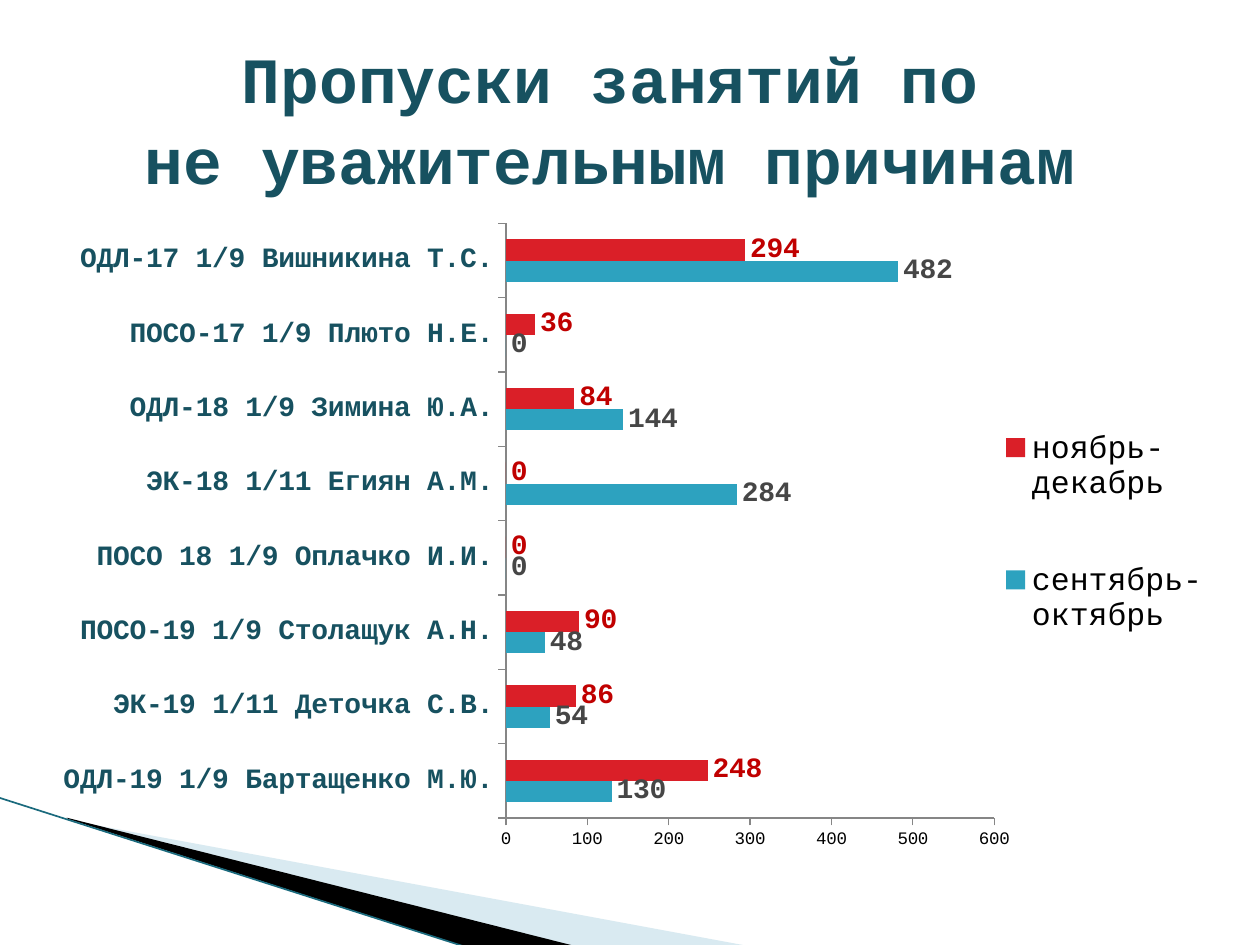
from lxml import etree
from pptx import Presentation
from pptx.chart.data import CategoryChartData
from pptx.dml.color import RGBColor
from pptx.enum.chart import (XL_CHART_TYPE, XL_LABEL_POSITION, XL_LEGEND_POSITION,
                             XL_TICK_MARK)
from pptx.enum.shapes import MSO_CONNECTOR
from pptx.enum.text import MSO_ANCHOR, MSO_AUTO_SIZE, PP_ALIGN
from pptx.oxml import parse_xml
from pptx.oxml.ns import nsdecls, qn
from pptx.util import Inches, Pt

BAR = XL_CHART_TYPE.BAR_CLUSTERED
OUTSIDE_END = XL_LABEL_POSITION.OUTSIDE_END
RIGHT = XL_LEGEND_POSITION.RIGHT
TICK_OUT = XL_TICK_MARK.OUTSIDE
STRAIGHT = MSO_CONNECTOR.STRAIGHT

DARK_TEAL = RGBColor(0x17, 0x51, 0x60)
EDGE_TEAL = RGBColor(0x1A, 0x6A, 0x7D)
PALE_BLUE = RGBColor(0xA0, 0xCB, 0xDC)
TEAL = RGBColor(0x2D, 0xA2, 0xBF)
RED = RGBColor(0xDA, 0x1F, 0x28)
ORANGE = RGBColor(0xEB, 0x64, 0x1B)
BLUE = RGBColor(0x39, 0x63, 0x9D)
DARK_RED = RGBColor(0xC0, 0x00, 0x00)
DARK_GREY = RGBColor(0x46, 0x46, 0x46)
AXIS_GREY = RGBColor(0x86, 0x86, 0x86)
BLACK = RGBColor(0, 0, 0)
FONT = "Courier New"

TITLE_LINES = ("Пропуски занятий по ", "не уважительным причинам ")
GROUPS = ("ОДЛ-19 1/9 Бартащенко М.Ю.", "ЭК-19 1/11 Деточка С.В.",
          "ПОСО-19 1/9 Столащук А.Н.", "ПОСО 18 1/9 Оплачко И.И.",
          "ЭК-18 1/11 Егиян А.М.", "ОДЛ-18 1/9 Зимина Ю.А.",
          "ПОСО-17 1/9 Плюто Н.Е.", "ОДЛ-17 1/9 Вишникина Т.С.")
# Name, values, bar colour, label colour (None: series still without data)
PERIODS = (
    ("сентябрь-октябрь", (130, 54, 48, 0, 284, 144, 0, 482), TEAL, DARK_GREY),
    ("ноябрь-декабрь", (248, 86, 90, 0, 0, 84, 36, 294), RED, DARK_RED),
    ("Ряд 3", (), ORANGE, None),
    ("Ряд 4", (), BLUE, None),
)


def set_font(font, size, color, bold=False):
    values = {"name": FONT, "size": Pt(size), "bold": bold}
    for name, value in values.items():
        setattr(font, name, value)
    font.color.rgb = color


def add_wedge(s, points, color, alpha=None):
    points = [(Inches(x), Inches(y)) for x, y in points]
    builder = s.shapes.build_freeform(*points[0])
    builder.add_line_segments(points[1:])
    sp = builder.convert_to_shape()
    sp.shadow.inherit = False
    sp.fill.solid()
    sp.fill.fore_color.rgb = color
    sp.line.fill.background()
    if alpha is not None:
        fill_color = sp.fill._xPr.find(qn("a:solidFill"))[0]
        etree.SubElement(fill_color, qn("a:alpha"), val=str(alpha * 1000))


def add_edge(s, start, end, color, width):
    points = [Inches(v) for v in (*start, *end)]
    line = s.shapes.add_connector(STRAIGHT, *points)
    line.line.color.rgb = color
    line.line.width = Pt(width)
    etree.SubElement(line._element.spPr, qn("a:effectLst"))


def add_title(s):
    title = s.shapes.title
    box = {"left": 0.5, "top": 0.3, "width": 9, "height": 1.25}
    for name, value in box.items():
        setattr(title, name, Inches(value))
    tf = title.text_frame
    frame = {"word_wrap": True, "auto_size": MSO_AUTO_SIZE.NONE,
             "vertical_anchor": MSO_ANCHOR.MIDDLE}
    for name, value in frame.items():
        setattr(tf, name, value)
    p = tf.paragraphs[0]
    p.alignment = PP_ALIGN.CENTER
    p.line_spacing = 1.05
    for i, text in enumerate(TITLE_LINES):
        if i:
            p.add_line_break()
        r = p.add_run()
        r.text = text
        set_font(r.font, 36.9, DARK_TEAL, True)


def set_layout(parent, after, box, inner=False):
    """Place a chart part by percentages of the chart area."""
    for old in parent.findall(qn("c:layout")):
        parent.remove(old)
    target = '<c:layoutTarget val="inner"/>' if inner else ""
    modes = '<c:xMode val="edge"/><c:yMode val="edge"/>'
    body = "".join(f'<c:{tag} val="{value / 100:.3f}"/>'
                   for tag, value in zip("xywh", box))
    layout = parse_xml(f'<c:layout {nsdecls("c")}><c:manualLayout>'
                       f'{target}{modes}{body}</c:manualLayout></c:layout>')
    if after is None:
        parent.insert(0, layout)
    else:
        after.addnext(layout)


def hide_legend_entry(position, index):
    """Add a deleted legend entry after the given element and return it."""
    entry = parse_xml(f'<c:legendEntry {nsdecls("c")}><c:idx val="{index}"/>'
                      f'<c:delete val="1"/></c:legendEntry>')
    position.addnext(entry)
    return entry


def format_axis(axis, size, color, bold=False):
    axis.has_major_gridlines = False
    axis.major_tick_mark = TICK_OUT
    axis.format.line.color.rgb = AXIS_GREY
    set_font(axis.tick_labels.font, size, color, bold)


def format_series(series, color, label_color):
    series.format.fill.solid()
    series.format.fill.fore_color.rgb = color
    series.invert_if_negative = False
    if label_color is not None:
        labels = series.data_labels
        labels.show_value = True
        labels.position = OUTSIDE_END
        set_font(labels.font, 16, label_color, True)


def add_absence_chart(s):
    data = CategoryChartData()
    data.categories = GROUPS
    for name, values, _, _ in PERIODS:
        data.add_series(name, values)
    box = [Inches(v) for v in (0.12, 1.62, 9.69, 5.28)]
    chart = s.shapes.add_chart(BAR, *box, data).chart
    chart.has_title = False
    set_font(chart.font, 10, BLACK)

    # Bars
    plot = chart.plots[0]
    plot.gap_width = 150
    plot.overlap = 0
    plot.vary_by_categories = False
    for series, (_, _, color, label_color) in zip(plot.series, PERIODS):
        format_series(series, color, label_color)

    # Axes
    format_axis(chart.category_axis, 16, DARK_TEAL, True)
    format_axis(chart.value_axis, 10, BLACK)
    scale = {"minimum_scale": 0, "maximum_scale": 600, "major_unit": 100}
    for name, value in scale.items():
        setattr(chart.value_axis, name, value)

    # Legend, without the series that have no data
    chart.has_legend = True
    legend = chart.legend
    legend.position = RIGHT
    legend.include_in_layout = False
    set_font(legend.font, 18, BLACK)
    last = legend._element.find(qn("c:legendPos"))
    for i, (_, values, _, _) in enumerate(PERIODS):
        if not values:
            last = hide_legend_entry(last, i)

    # Placement
    set_layout(legend._element, last, (79.7, 25, 19, 49))
    plot_area = chart._chartSpace.chart.plotArea
    set_layout(plot_area, None, (40.2, 2.9, 40, 89.4), inner=True)


def main():
    prs = Presentation()
    prs.slide_width, prs.slide_height = Inches(10), Inches(7.5)
    s = prs.slides.add_slide(prs.slide_layouts[5])

    # Corner decoration
    add_wedge(s, ((0.55, 6.51), (5.95, 7.51), (4.56, 7.51), (0.55, 6.5)), PALE_BLUE, 40)
    add_wedge(s, ((0.53, 6.49), (4.57, 7.51), (3.72, 7.52), (0.54, 6.5)), BLACK)
    add_edge(s, (-0.01, 6.33), (3.71, 7.52), EDGE_TEAL, 0.95)

    # Content
    add_title(s)
    add_absence_chart(s)
    prs.save("out.pptx")


if __name__ == "__main__":
    main()
